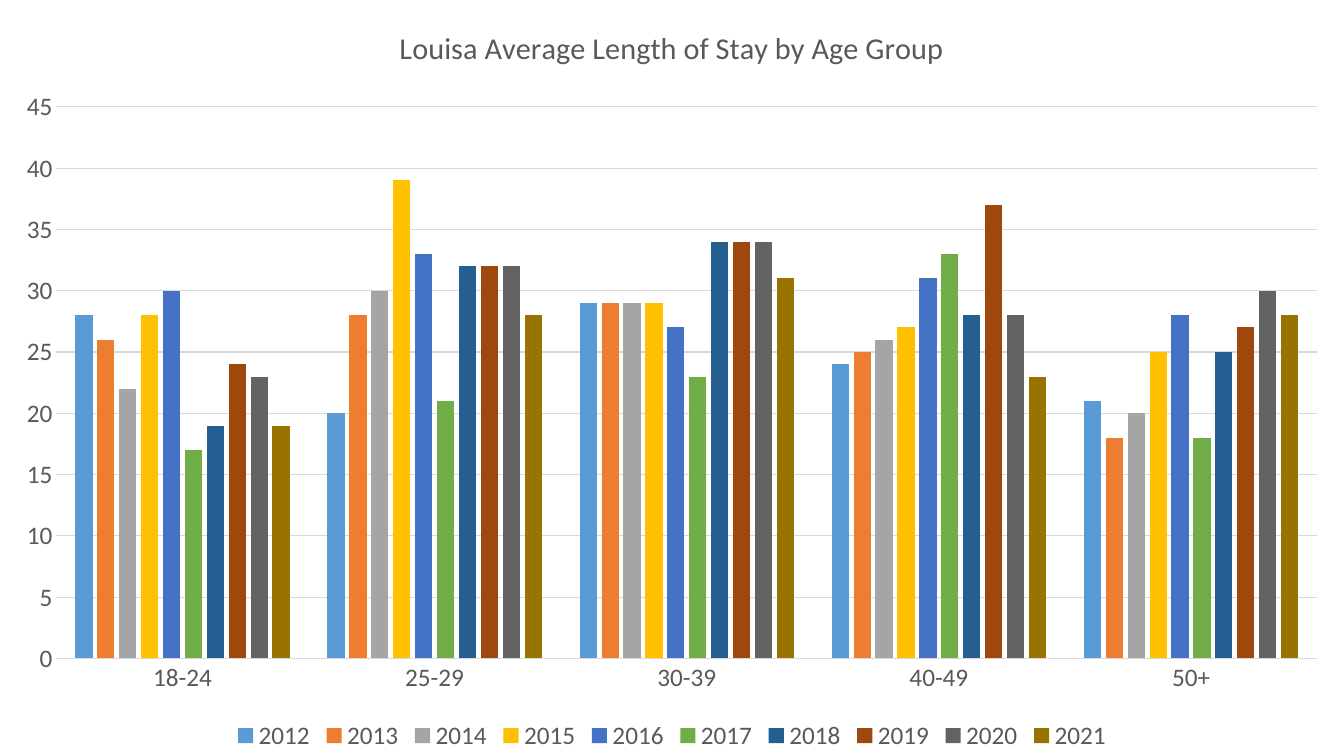
import pptx
import pptx.chart.data
import pptx.dml.color
import pptx.enum.chart
import pptx.util
from dataclasses import dataclass
from pptx.util import Inches


@dataclass(frozen=True)
class Theme:
    """Hold the colours, font and type sizes."""
    font: str = "Calibri"
    text: str = "595959"
    rule: str = "D9D9D9"
    size: float = 18
    head: float = 21.6
    bars: tuple = ("5B9BD5", "ED7D31", "A5A5A5", "FFC000", "4472C4",
                   "70AD47", "255E91", "9E480E", "636363", "997300")


THEME = Theme()
TITLE = "Louisa Average Length of Stay by Age Group"
YEARS = range(2012, 2022)
STAYS = {
    "18-24": (28, 26, 22, 28, 30, 17, 19, 24, 23, 19),
    "25-29": (20, 28, 30, 39, 33, 21, 32, 32, 32, 28),
    "30-39": (29, 29, 29, 29, 27, 23, 34, 34, 34, 31),
    "40-49": (24, 25, 26, 27, 31, 33, 28, 37, 28, 23),
    "50+": (21, 18, 20, 25, 28, 18, 25, 27, 30, 28),
}


def paint(fill, color):
    """Give a fill one solid colour."""
    fill.solid()
    fill.fore_color.rgb = pptx.dml.color.RGBColor.from_string(color)


def style(font, size=THEME.size):
    """Set the face, size and colour of a font."""
    font.name = THEME.font
    font.size = pptx.util.Pt(size)
    font.bold = False
    paint(font.fill, THEME.text)


def rule(line):
    """Draw a thin grey line."""
    paint(line.fill, THEME.rule)
    line.width = pptx.util.Pt(0.75)


def add_bars(slide, width, height):
    """Add the clustered columns over the given area."""
    data = pptx.chart.data.CategoryChartData(number_format="0")
    data.categories = list(STAYS)
    for year, stays in zip(YEARS, zip(*STAYS.values())):
        data.add_series(str(year), stays)
    kind = pptx.enum.chart.XL_CHART_TYPE.COLUMN_CLUSTERED
    chart = slide.shapes.add_chart(kind, 0, 0, width, height, data).chart
    style(chart.font)
    plot = chart.plots[0]
    plot.gap_width = 219
    plot.overlap = -27
    plot.vary_by_categories = False
    for bar, color in zip(plot.series, THEME.bars):
        paint(bar.format.fill, color)
        bar.invert_if_negative = False
    return chart


def set_title(chart):
    """Write the chart title above the columns."""
    chart.has_title = True
    frame = chart.chart_title.text_frame
    frame.text = TITLE
    style(frame.paragraphs[0].runs[0].font, THEME.head)
    chart.chart_title.include_in_layout = False


def set_axes(chart):
    """Format both axes and the grid."""
    for axis in (chart.category_axis, chart.value_axis):
        axis.major_tick_mark = pptx.enum.chart.XL_TICK_MARK.NONE
        axis.minor_tick_mark = pptx.enum.chart.XL_TICK_MARK.NONE
        style(axis.tick_labels.font)
    rule(chart.category_axis.format.line)
    scale = chart.value_axis
    scale.minimum_scale = 0
    scale.maximum_scale = 45
    scale.major_unit = 5
    scale.format.line.fill.background()
    scale.has_major_gridlines = True
    rule(scale.major_gridlines.format.line)


def set_legend(chart):
    """Put the legend of years at the bottom."""
    chart.has_legend = True
    chart.legend.position = pptx.enum.chart.XL_LEGEND_POSITION.BOTTOM
    chart.legend.include_in_layout = False
    style(chart.legend.font)


def main():
    """Build the slide and save it."""
    deck = pptx.Presentation()
    deck.slide_width = Inches(13.33)
    deck.slide_height = Inches(7.5)
    slide = deck.slides.add_slide(deck.slide_layouts[6])
    chart = add_bars(slide, deck.slide_width, deck.slide_height)
    set_title(chart)
    set_axes(chart)
    set_legend(chart)
    deck.save("out.pptx")


if __name__ == "__main__":
    main()
